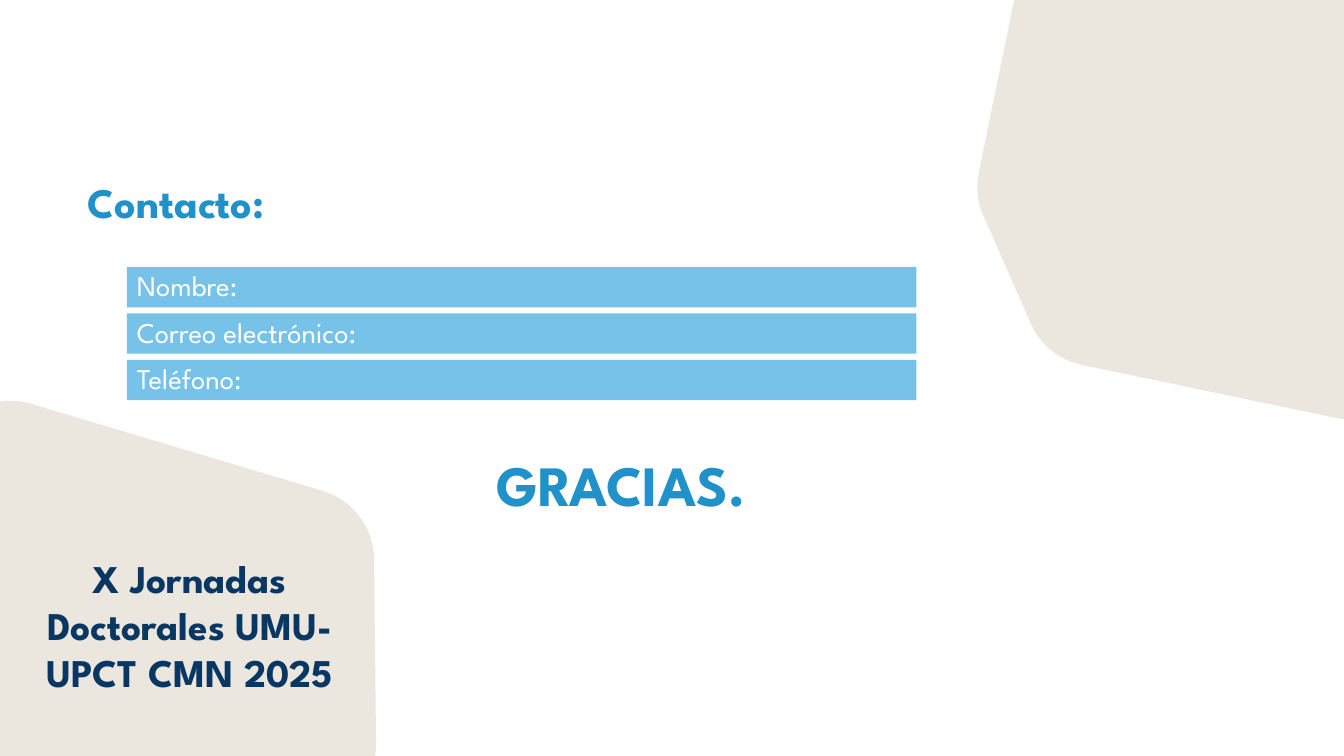
from lxml import etree
from pptx import Presentation
from pptx.dml.color import RGBColor
from pptx.enum import shapes, text
from pptx.oxml import ns
from pptx.util import Inches, Pt

FONT = "League Spartan"
SAND, NAVY, BLUE, SKY, WHITE = "E3DED1", "083763", "2191C9", "77C2E8", "FFFFFF"


def paint(shape, value):
    shape.shadow.inherit = False
    shape.line.fill.background()
    shape.fill.solid()
    shape.fill.fore_color.rgb = RGBColor.from_string(value)


def write(box, words, size, hue, bold=False, align=text.PP_ALIGN.LEFT,
          anchor=text.MSO_ANCHOR.TOP, spacing=None):
    frame = box.text_frame
    frame.word_wrap = True
    frame.vertical_anchor = anchor
    frame.text = words
    line = frame.paragraphs[0]
    line.alignment = align
    line.line_spacing = spacing
    font = line.runs[0].font
    font.name, font.size, font.bold = FONT, Pt(size), bold
    font.color.rgb = RGBColor.from_string(hue)


prs = Presentation()
prs.slide_width, prs.slide_height = Inches(13.33), Inches(7.5)
slide = prs.slides.add_slide(prs.slide_layouts[6])

upper_pebble = [
    [(13.94, 3.92)], [(15.16, 2.56)], [(15.37, 2.33), (15.4, 1.98), (15.24, 1.72)],
    [(13.69, -0.87)], [(13.59, -1.04), (13.42, -1.16), (13.22, -1.2)],
    [(11.13, -1.63)], [(10.74, -1.71), (10.36, -1.47), (10.28, -1.08)],
    [(9.71, 1.7)], [(9.68, 1.85), (9.69, 2), (9.75, 2.13)],
    [(10.22, 3.2)], [(10.31, 3.42), (10.5, 3.57), (10.73, 3.62)],
    [(13.27, 4.15)], [(13.52, 4.2), (13.78, 4.11), (13.94, 3.92)],
]
lower_pebble = [
    [(3.73, 7.38)], [(3.71, 5.55)], [(3.71, 5.24), (3.5, 4.96), (3.2, 4.87)],
    [(0.32, 4.01)], [(0.12, 3.95), (-0.08, 3.97), (-0.25, 4.08)],
    [(-2.1, 5.17)], [(-2.44, 5.37), (-2.55, 5.8), (-2.35, 6.14)],
    [(-0.9, 8.59)], [(-0.83, 8.72), (-0.71, 8.82), (-0.58, 8.88)],
    [(0.49, 9.36)], [(0.7, 9.45), (0.95, 9.44), (1.15, 9.32)],
    [(3.38, 8)], [(3.6, 7.87), (3.73, 7.63), (3.73, 7.38)],
]
for outline in (upper_pebble, lower_pebble):
    start, *corners = [(Inches(x), Inches(y)) for segment in outline for x, y in segment]
    builder = slide.shapes.build_freeform(*start)
    builder.add_line_segments(corners)
    pebble = builder.convert_to_shape()
    paint(pebble, SAND)
    tint = pebble.fill._xPr.find(".//" + ns.qn("a:srgbClr"))
    etree.SubElement(tint, ns.qn("a:alpha"), val="71000")

    strokes = iter(pebble._element.findall(".//" + ns.qn("a:lnTo")))
    for segment in outline[1:]:
        first, *rest = [next(strokes) for point in segment]
        if rest:
            first.tag = ns.qn("a:cubicBezTo")
            for stroke in rest:
                first.append(stroke[0])
                stroke.getparent().remove(stroke)

event = slide.shapes.add_textbox(Inches(0.17), Inches(5.76), Inches(3.42), Inches(0.87))
write(event, "X Jornadas Doctorales UMU-UPCT CMN 2025", 28, NAVY, True,
      text.PP_ALIGN.CENTER, text.MSO_ANCHOR.MIDDLE)

heading = slide.shapes.add_textbox(Inches(0.77), Inches(1.7), Inches(8.17), Inches(0.61))
write(heading, "Contacto:", 30, BLUE, True)

for row, label in enumerate(("Nombre:", "Correo electrónico:", "Teléfono:")):
    field = slide.shapes.add_shape(
        shapes.MSO_SHAPE.RECTANGLE,
        Inches(1.26), Inches(2.65 + 0.46 * row), Inches(7.83), Inches(0.4))
    paint(field, SKY)
    write(field, label, 20.4, WHITE, spacing=0.9)

thanks = slide.shapes.add_shape(
    shapes.MSO_SHAPE.RECTANGLE, Inches(3.69), Inches(4.24), Inches(4.94), Inches(0.91))
paint(thanks, WHITE)
thanks.text_frame.margin_bottom = 0
write(thanks, "GRACIAS.", 40.7, BLUE, True, text.PP_ALIGN.CENTER,
      text.MSO_ANCHOR.BOTTOM, 0.9)

prs.save("out.pptx")
